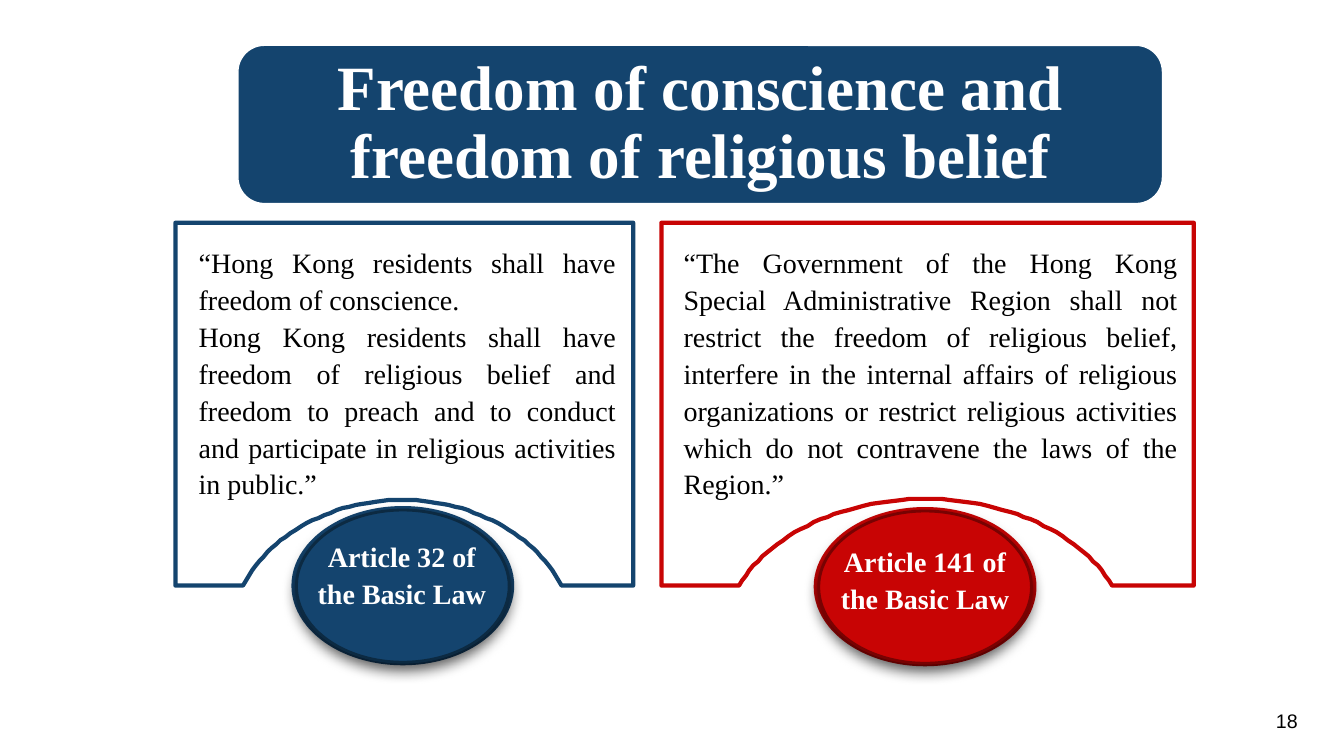
from dataclasses import dataclass
from math import asin, cos, pi, sin, sqrt

from lxml.etree import SubElement
from pptx import Presentation
from pptx.dml.color import RGBColor
from pptx.enum.shapes import MSO_SHAPE
from pptx.enum.text import MSO_ANCHOR, MSO_AUTO_SIZE, PP_ALIGN
from pptx.oxml.ns import qn
from pptx.util import Emu, Pt


@dataclass(frozen=True)
class Theme:
    navy: str = "14446E"
    navy_edge: str = "0C2A42"
    red: str = "C80404"
    red_edge: str = "780202"
    white: str = "FFFFFF"
    black: str = "000000"
    serif: str = "Times New Roman"
    sans: str = "Arial"
    title: int = 45
    body: int = 20
    page: int = 14


THEME = Theme()
PX = 9144
CARD_TOP, CARD_FOOT = 221, 581
ARCH_SPAN = 0.92
ARCH_STEPS = 60


def px(*lengths):
    return [Emu(n * PX) for n in lengths]


def rgb(color):
    return RGBColor.from_string(color)


def style(sp, fill, line, width):
    sp.shadow.inherit = False
    if fill:
        sp.fill.solid()
        sp.fill.fore_color.rgb = rgb(fill)
    else:
        sp.fill.background()
    if line:
        sp.line.color.rgb = rgb(line)
        sp.line.width = Pt(width)
    else:
        sp.line.fill.background()


def place(sp, box):
    sp.left, sp.top, sp.width, sp.height = px(*box)


def write(sp, lines, size, color, align, spacing=1.1, font=THEME.serif,
          bold=False, insets=(0, 0, 0, 0), anchor=MSO_ANCHOR.TOP):
    tf = sp.text_frame
    tf.word_wrap = True
    tf.auto_size = MSO_AUTO_SIZE.NONE
    tf.vertical_anchor = anchor
    tf.margin_left, tf.margin_top, tf.margin_right, tf.margin_bottom = px(*insets)
    for i, line in enumerate(lines):
        p = tf.add_paragraph() if i else tf.paragraphs[0]
        pPr = p._p.get_or_add_pPr()
        pPr.set("marL", "0")
        pPr.set("indent", "0")
        SubElement(pPr, qn("a:buNone"))
        p.alignment = align
        p.line_spacing = spacing
        p.space_before = p.space_after = Pt(0)
        r = p.add_run()
        r.text = line
        r.font.name = font
        r.font.size = Pt(size)
        r.font.bold = bold
        r.font.color.rgb = rgb(color)


def add_title(s, text):
    box = (236, 45, 917, 157)
    plate = s.shapes.add_shape(MSO_SHAPE.ROUNDED_RECTANGLE, *px(*box))
    style(plate, THEME.navy, THEME.white, 1)
    s.shapes._spTree.insert(2, plate._element)
    place(s.shapes.title, box)
    write(s.shapes.title, [text], THEME.title, THEME.white, PP_ALIGN.CENTER,
          spacing=0.9, bold=True, insets=(20, 3, 20, 3), anchor=MSO_ANCHOR.MIDDLE)


def arch_points(center, half, apex):
    rx = half / ARCH_SPAN
    ry = (CARD_FOOT - apex) / (1 - sqrt(1 - ARCH_SPAN ** 2))
    reach = asin(ARCH_SPAN)
    angles = [reach * (1 - 2 * i / ARCH_STEPS) for i in range(ARCH_STEPS + 1)]
    return [(center + rx * sin(a), apex + ry * (1 - cos(a))) for a in angles]


def add_card(s, left, right, center, half, apex, color):
    fb = s.shapes.build_freeform(left, CARD_TOP, scale=PX)
    fb.add_line_segments([(right, CARD_TOP), (right, CARD_FOOT),
                          *arch_points(center, half, apex),
                          (left, CARD_FOOT)], close=True)
    style(fb.convert_to_shape(), None, color, 3)


def add_shadow(sp):
    effects = sp._element.spPr.find(qn("a:effectLst"))
    shadow = SubElement(effects, qn("a:outerShdw"), blurRad=str(Pt(10)),
                        dist=str(Pt(5)), dir="5400000", rotWithShape="0")
    color = SubElement(shadow, qn("a:srgbClr"), val=THEME.black)
    SubElement(color, qn("a:alpha"), val="63000")


def add_medal(s, left, top, color, edge):
    group = s.shapes.add_group_shape()
    ring = group.shapes.add_shape(MSO_SHAPE.DONUT, *px(left, top, 221, 158))
    ring.adjustments[0] = 0.05
    style(ring, color, None, 0)
    disc = group.shapes.add_shape(MSO_SHAPE.OVAL, *px(left + 5, top + 4, 211, 151))
    style(disc, color, edge, 2)
    add_shadow(disc)


def add_label(s, box, text, size, color, align, **options):
    sp = s.shapes.add_textbox(*px(*box))
    write(sp, [text], size, color, align, **options)


def add_quote(s, idx, box, lines):
    sp = s.placeholders[idx]
    place(sp, box)
    write(sp, lines, THEME.body, THEME.black, PP_ALIGN.JUSTIFY)


def main():
    prs = Presentation()
    prs.slide_width, prs.slide_height = px(1333, 750)
    s = prs.slides.add_slide(prs.slide_layouts[3])

    add_title(s, "Freedom of conscience and freedom of religious belief")
    add_quote(s, 1, (197, 240, 414, 259), [
        "“Hong Kong residents shall have freedom of conscience.",
        "Hong Kong residents shall have freedom of religious belief and freedom "
        "to preach and to conduct and participate in religious activities in public.”",
    ])
    add_quote(s, 2, (678, 240, 490, 259), [
        "“The Government of the Hong Kong Special Administrative Region shall not "
        "restrict the freedom of religious belief, interfere in the internal affairs "
        "of religious organizations or restrict religious activities which do not "
        "contravene the laws of the Region.”",
    ])

    add_card(s, 174, 628, 399, 158, 496, THEME.navy)
    add_medal(s, 289, 502, THEME.navy, THEME.navy_edge)
    add_card(s, 656, 1184, 918, 185, 495, THEME.red)
    add_medal(s, 807, 503, THEME.red, THEME.red_edge)

    for box, article in (((314, 532, 169, 111), 32), ((831, 537, 173, 74), 141)):
        add_label(s, box, f"Article {article} of the Basic Law", THEME.body,
                  THEME.white, PP_ALIGN.CENTER, bold=True)
    add_label(s, (997, 698, 300, 40), "18", THEME.page, THEME.black, PP_ALIGN.RIGHT,
              spacing=1.0, font=THEME.sans, insets=(10, 5, 10, 5))

    prs.save("out.pptx")


if __name__ == "__main__":
    main()
